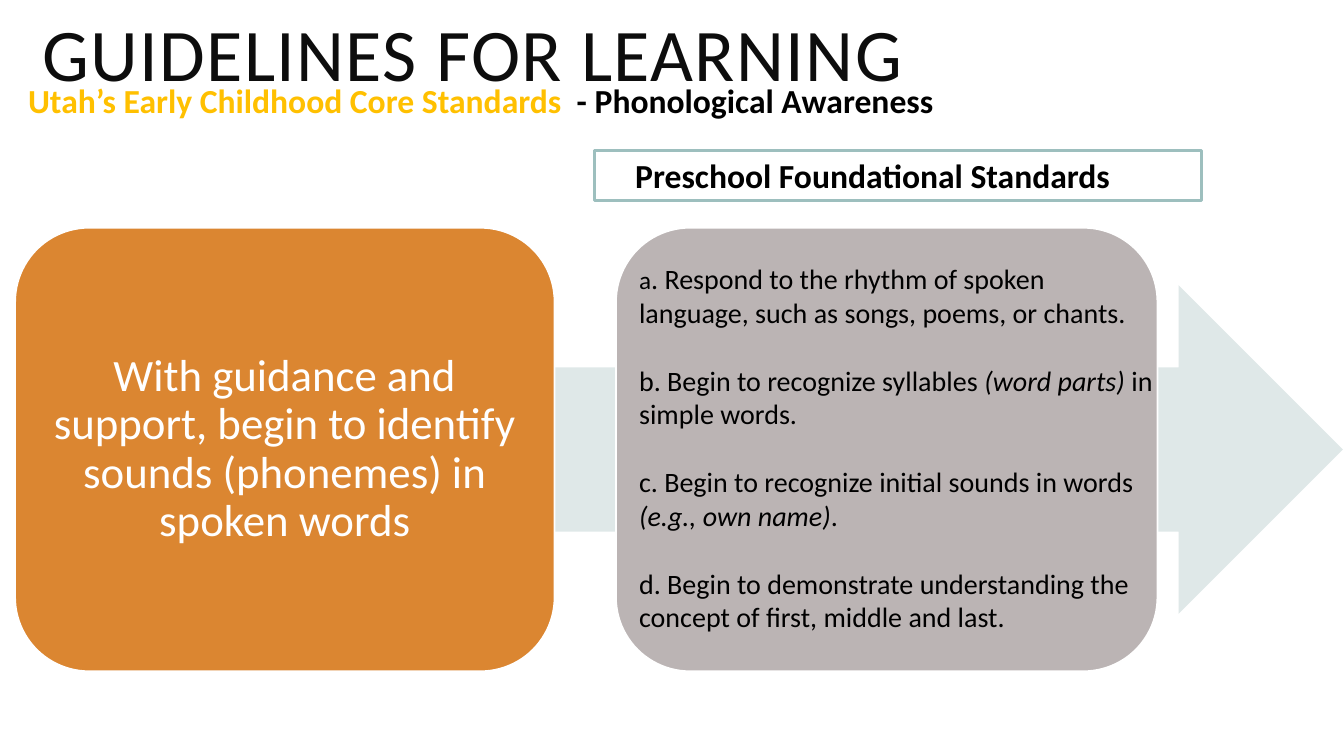
"""Build the phonological awareness standards slide."""
from pptx import Presentation
from pptx.dml.color import RGBColor
from pptx.enum.shapes import MSO_SHAPE as Form
from pptx.enum.text import MSO_ANCHOR as Anchor, PP_ALIGN as Align
from pptx.util import Inches, Pt

BLACK, WHITE, GOLD = "000000", "FFFFFF", "FFC000"
TITLE = [["GUIDELINES FOR LEARNING"]]
TOPIC = [[("Utah’s Early Childhood Core Standards  ", {"color": GOLD}),
          "- Phonological Awareness"]]
HEADER = [["Preschool Foundational Standards"]]
GOAL = [["With guidance and support, begin to identify sounds (phonemes) in spoken words"]]
ITEMS = [
    [("a", {"size": 18}),
     ". Respond to the rhythm of spoken language, such as songs, poems, or chants."],
    ["b. Begin to recognize syllables ", ("(word parts) ", {"italic": True}),
     "in simple words."],
    ["c. Begin to recognize initial sounds in words ",
     ("(e.g., own name)", {"italic": True}), "."],
    ["d. Begin to demonstrate understanding the concept of first, middle and last."],
]
SHAPES = [
    (Form.RIGHT_ARROW, (1.78, 2.83, 11.54, 3.26), "DFE8E8", None, 0),
    (Form.ROUNDED_RECTANGLE, (0.15, 2.26, 5.35, 4.4), "DB8631", WHITE, 1.25),
    (Form.ROUNDED_RECTANGLE, (6.11, 2.26, 5.37, 4.4), "BBB4B4", WHITE, 1.25),
    (Form.RECTANGLE, (5.9, 1.49, 6.02, 0.5), None, "9DBFBE", 2.25),
]


def paint(code):
    return RGBColor.from_string(code)


def draw(form, box, fill, edge, width):
    shape = slide.shapes.add_shape(form, *map(Inches, box))
    shape.shadow.inherit = False
    if fill:
        shape.fill.solid()
        shape.fill.fore_color.rgb = paint(fill)
    else:
        shape.fill.background()
    if edge:
        shape.line.color.rgb = paint(edge)
        shape.line.width = Pt(width)
    else:
        shape.line.fill.background()
    return shape


def write(shape, paras, size, color=BLACK, bold=False, align=Align.LEFT,
          anchor=Anchor.TOP, inset=(0.1, 0.05, 0.1, 0.05), lead=1, gap=0, track=0):
    frame = shape.text_frame
    frame.word_wrap = True
    frame.vertical_anchor = anchor
    (frame.margin_left, frame.margin_top,
     frame.margin_right, frame.margin_bottom) = map(Inches, inset)
    for i, parts in enumerate(paras):
        para = frame.add_paragraph() if i else frame.paragraphs[0]
        para.alignment, para.line_spacing = align, lead
        para.space_before = Pt(gap if i else 0)
        for part in parts:
            words, style = (part, {}) if isinstance(part, str) else part
            run = para.add_run()
            run.text = words
            font = run.font
            font.name, font.bold = "Calibri", bold
            font.size = Pt(style.get("size", size))
            font.italic = style.get("italic", False)
            font.color.rgb = paint(style.get("color", color))
            if track:
                font._element.set("spc", str(track * 100))


def label(box, paras, size, **style):
    write(slide.shapes.add_textbox(*map(Inches, box)), paras, size, **style)


deck = Presentation()
deck.slide_width, deck.slide_height = Inches(13.33), Inches(7.5)
slide = deck.slides.add_slide(deck.slide_layouts[6])

label((0.32, 0.14, 12.29, 0.92), TITLE, 53, color="0D0D0D",
      anchor=Anchor.MIDDLE, lead=0.8, track=1)
arrow, left, right, head = [draw(*row) for row in SHAPES]
write(left, GOAL, 32, color=WHITE, align=Align.CENTER,
      anchor=Anchor.MIDDLE, inset=(0.13,) * 4, lead=0.9)
write(head, HEADER, 24, bold=True, inset=(0.4, 0.05, 0.1, 0.05))
label((0.18, 0.74, 11.05, 0.5), TOPIC, 24, bold=True)
label((6.24, 2.55, 5.33, 4.1), ITEMS, 20, gap=24.4)

deck.save("out.pptx")
